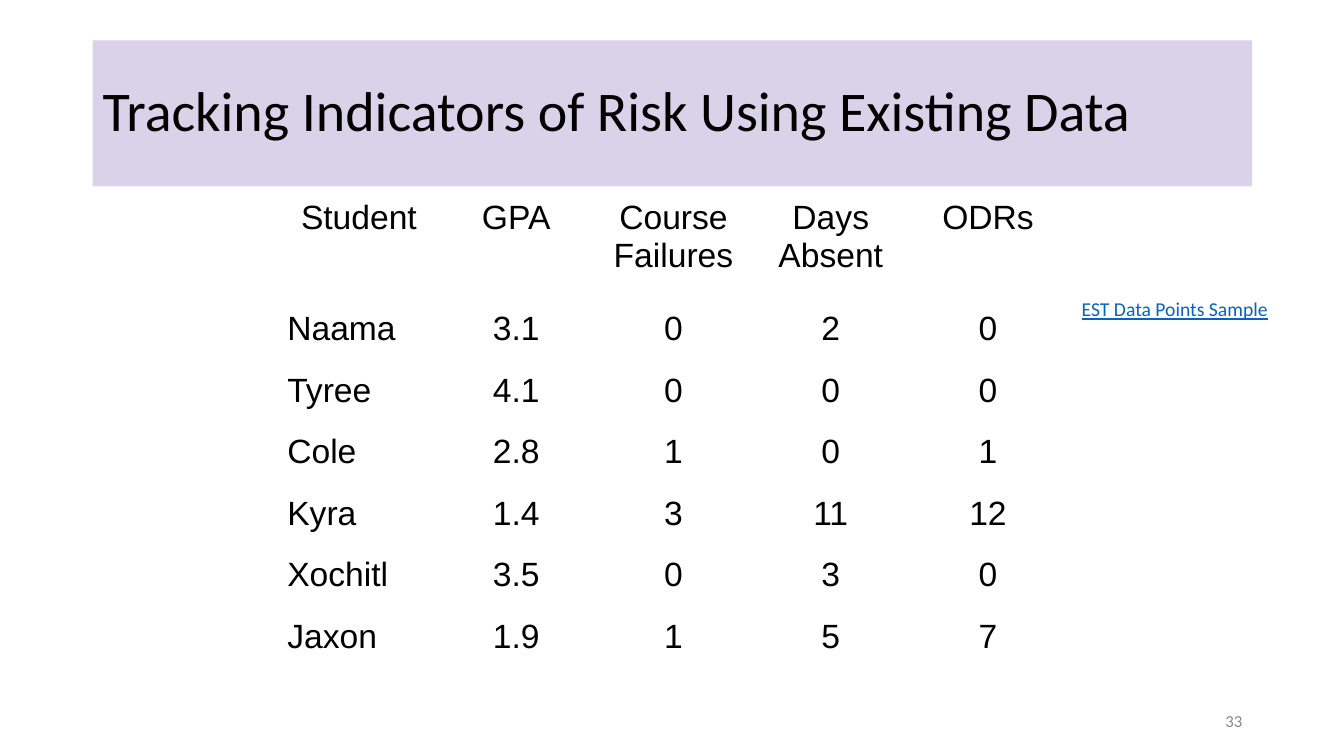
from pptx import Presentation
from pptx import util as u
from pptx.dml.color import RGBColor
from pptx.enum import shapes, text

ROWS = [
    ("Student", "GPA", "Course Failures", "Days Absent", "ODRs"),
    ("Naama", "3.1", "0", "2", "0"),
    ("Tyree", "4.1", "0", "0", "0"),
    ("Cole", "2.8", "1", "0", "1"),
    ("Kyra", "1.4", "3", "11", "12"),
    ("Xochitl", "3.5", "0", "3", "0"),
    ("Jaxon", "1.9", "1", "5", "7"),
]
LEFT, MID, RIGHT = text.PP_ALIGN.LEFT, text.PP_ALIGN.CENTER, text.PP_ALIGN.RIGHT
TOP, CENTER = text.MSO_ANCHOR.TOP, text.MSO_ANCHOR.MIDDLE


def color(code):
    return RGBColor.from_string(code)


def apply(item, form):
    for name, value in form.items():
        setattr(item, name, value)


def write(frame, words, size, face, ink, align=LEFT, **form):
    para = frame.paragraphs[0]
    para.alignment = align
    run = para.add_run()
    run.text = words
    apply(run.font, {"size": u.Pt(size), "name": face, **form})
    run.font.color.rgb = color(ink)
    return para


def inset(item, side, edge):
    apply(item, {"margin_left": u.Inches(side), "margin_right": u.Inches(side),
                 "margin_top": u.Inches(edge), "margin_bottom": u.Inches(edge)})


def add_title(slide, box, words):
    band = slide.shapes.add_shape(shapes.MSO_SHAPE.RECTANGLE, *map(u.Inches, box))
    band.shadow.inherit = False
    band.fill.solid()
    band.fill.fore_color.rgb = color("D9D2E9")
    band.line.fill.background()
    frame = band.text_frame
    apply(frame, {"word_wrap": True, "vertical_anchor": CENTER})
    inset(frame, 0.1, 0.05)
    write(frame, words, 40, "Calibri", "000000").line_spacing = 0.9


def add_label(slide, box, words, size, ink, anchor=TOP, edge=0.05, **form):
    frame = slide.shapes.add_textbox(*map(u.Inches, box)).text_frame
    apply(frame, {"word_wrap": True, "vertical_anchor": anchor})
    inset(frame, 0.1, edge)
    write(frame, words, size, "Calibri", ink, **form)


def add_grid(slide, left, top, wide, head, high):
    count = len(ROWS[0])
    total = head + high * (len(ROWS) - 1)
    grid = slide.shapes.add_table(len(ROWS), count, *map(
        u.Inches, (left, top, wide * count, total))).table
    apply(grid, {"first_row": False, "horz_banding": False})
    for col in grid.columns:
        col.width = u.Inches(wide)
    for r, row in enumerate(ROWS):
        grid.rows[r].height = u.Inches(high if r else head)
        for c, words in enumerate(row):
            cell = grid.cell(r, c)
            cell.fill.background()
            inset(cell, 0.07, 0.05)
            # Student names sit left; headings and figures are centred
            align = LEFT if r and c == 0 else MID
            write(cell.text_frame, words, 24, "Arial", "000000", align)


def main():
    deck = Presentation()
    apply(deck, {"slide_width": u.Inches(13.33), "slide_height": u.Inches(7.5)})
    slide = deck.slides.add_slide(deck.slide_layouts[6])

    # Title band
    add_title(slide, (0.92, 0.4, 11.5, 1.45),
              "Tracking Indicators of Risk Using Existing Data")
    # Slide number
    add_label(slide, (9.42, 6.95, 3, 0.4), "33", 12, "888888", CENTER, align=RIGHT)
    # Student indicators
    add_grid(slide, 2.78, 1.93, 1.56, 1.1, 0.61)
    # Sample reference
    add_label(slide, (10.63, 2.85, 2.23, 0.44), "EST Data Points Sample",
              14, "0563C1", edge=0.1, underline=True)

    deck.save("out.pptx")


if __name__ == "__main__":
    main()
